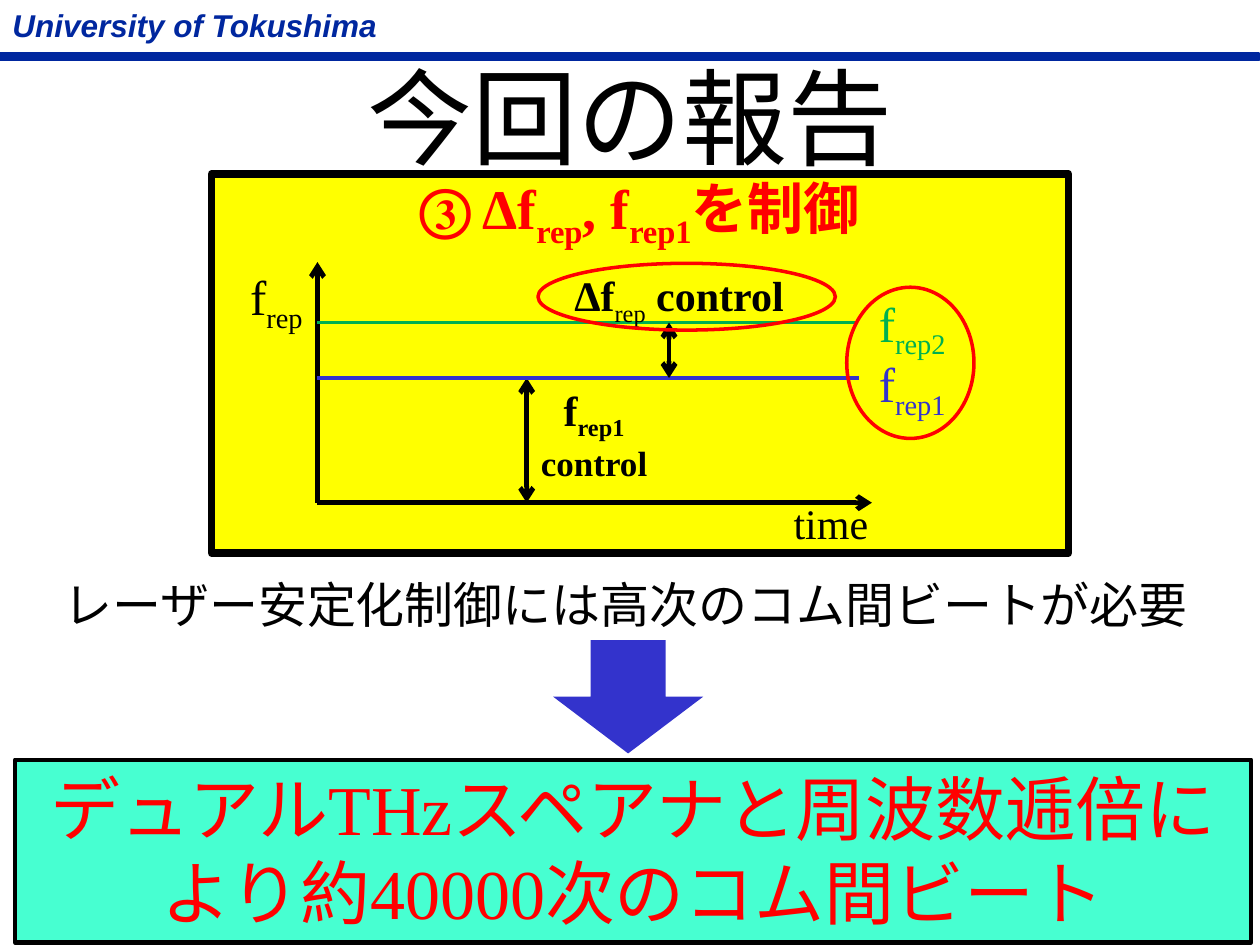
from dataclasses import dataclass
from typing import NamedTuple, Optional

from lxml.etree import SubElement
from pptx import Presentation
from pptx.dml.color import RGBColor
from pptx.enum.shapes import MSO_CONNECTOR, MSO_SHAPE
from pptx.enum.text import MSO_ANCHOR, PP_ALIGN
from pptx.oxml.ns import qn
from pptx.util import Inches, Pt

COLORS = {
    "navy": "00279F", "black": "000000", "yellow": "FFFF00", "green": "00B050",
    "blue": "3333CC", "red": "FF0000", "mint": "47FFD1",
}
COLS, ROWS = 100, 75
SERIF, SANS = "Times New Roman", "Arial"
LEFT, CENTER, RIGHT = PP_ALIGN.LEFT, PP_ALIGN.CENTER, PP_ALIGN.RIGHT

prs = Presentation()
prs.slide_width, prs.slide_height = Inches(10), Inches(7.5)
CELL_W, CELL_H = prs.slide_width / COLS, prs.slide_height / ROWS


class Box(NamedTuple):
    """Left, top, width and height in grid columns and rows."""
    col: float
    row: float
    cols: float
    rows: float

    def emu(self) -> list[int]:
        return [round(v * c) for v, c in zip(self, (CELL_W, CELL_H) * 2)]


class Run(NamedTuple):
    text: str
    size: float
    bold: bool = False
    sub: bool = False


@dataclass
class Label:
    box: Box
    paragraphs: list[list[Run]]
    color: str = "black"
    align: PP_ALIGN = CENTER
    font: str = SERIF
    italic: bool = False
    wrap: bool = True
    anchor: MSO_ANCHOR = MSO_ANCHOR.TOP


@dataclass
class Figure:
    kind: MSO_SHAPE
    box: Box
    fill: Optional[str] = None
    line: Optional[str] = None
    width: float = 1


@dataclass
class Stroke:
    start: tuple[float, float]
    end: tuple[float, float]
    color: str = "black"
    width: float = 2.75
    head: bool = False
    tail: bool = False


def rgb(name: str) -> RGBColor:
    return RGBColor.from_string(COLORS[name])


def write(sp, label: Label) -> None:
    tf = sp.text_frame
    tf.word_wrap = label.wrap
    tf.vertical_anchor = label.anchor
    for i, runs in enumerate(label.paragraphs):
        p = tf.add_paragraph() if i else tf.paragraphs[0]
        p.alignment = label.align
        for run in runs:
            r = p.add_run()
            r.text = run.text
            r.font.name, r.font.size = label.font, Pt(run.size)
            r.font.bold, r.font.italic = run.bold, label.italic
            r.font.color.rgb = rgb(label.color)
            if run.sub:
                r.font._element.set("baseline", "-25000")


def add_label(shapes, label: Label) -> None:
    write(shapes.add_textbox(*label.box.emu()), label)


def add_figure(shapes, fig: Figure):
    sp = shapes.add_shape(fig.kind, *fig.box.emu())
    sp.shadow.inherit = False
    if fig.fill:
        sp.fill.solid()
        sp.fill.fore_color.rgb = rgb(fig.fill)
    else:
        sp.fill.background()
    if fig.line:
        sp.line.color.rgb = rgb(fig.line)
        sp.line.width = Pt(fig.width)
    else:
        sp.line.fill.background()
    return sp


def add_stroke(shapes, stroke: Stroke) -> None:
    ends = Box(*stroke.start, *stroke.end).emu()
    line = shapes.add_connector(MSO_CONNECTOR.STRAIGHT, *ends)
    line.line.color.rgb = rgb(stroke.color)
    line.line.width = Pt(stroke.width)
    ln = line.line._get_or_add_ln()
    for tag, wanted in (("a:headEnd", stroke.head), ("a:tailEnd", stroke.tail)):
        if wanted:
            SubElement(ln, qn(tag), type="arrow")
    SubElement(line._element.spPr, qn("a:effectLst"))


def symbol(sub: str, size: float, bold: bool = False) -> list[Run]:
    return [Run("f", size, bold), Run(sub, size, bold, True)]


s = prs.slides.add_slide(prs.slide_layouts[6])

# Header band and title
add_figure(s.shapes, Figure(MSO_SHAPE.RECTANGLE, Box(0, 4.2, 99.9, 0.6), "navy", "navy"))
add_label(s.shapes, Label(Box(0, 0, 31.2, 4), [[Run("University of Tokushima", 18, True)]],
                          "navy", LEFT, SANS, italic=True, wrap=False))
add_label(s.shapes, Label(Box(7.5, 2.9, 85, 12.5), [[Run("今回の報告", 60)]],
                          font=SANS, anchor=MSO_ANCHOR.MIDDLE))

# Frequency diagram: panel, axes, levels and control arrows
X0, Y0 = 25.2, 39.9
REP1, REP2 = 30, 25.6
diagram = s.shapes.add_group_shape().shapes
add_figure(diagram, Figure(MSO_SHAPE.RECTANGLE, Box(16.8, 13.8, 68, 30.1),
                           "yellow", "black", 4.25))
for stroke in (
    Stroke((X0, Y0), (69.2, Y0), tail=True),
    Stroke((X0, Y0), (X0, 20.8), tail=True),
    Stroke((41.8, REP1), (41.8, Y0), head=True, tail=True),
    Stroke((X0, REP2), (68, REP2), "green", 2),
    Stroke((X0, REP1), (68.2, REP1), "blue", 2),
    Stroke((53.1, REP2), (53.1, REP1), head=True, tail=True),
):
    add_stroke(diagram, stroke)

# Diagram labels
for label in (
    Label(Box(60.1, 39, 11.7, 5), [[Run("time", 24)]]),
    Label(Box(41.6, 30, 11.1, 8.4),
          [symbol("rep1", 24, True), [Run("control", 20, True)]], wrap=False),
    Label(Box(13.8, 20.7, 11.2, 5.7), [symbol("rep", 28)], align=RIGHT),
    Label(Box(44.6, 20.9, 20.2, 5),
          [[Run("Δf", 24, True), Run("rep", 24, sub=True), Run(" control", 24, True)]],
          align=LEFT, wrap=False),
    Label(Box(67.3, 22.8, 10.2, 5.7), [symbol("rep2", 28)], "green"),
    Label(Box(66.8, 27.6, 11.2, 5.7), [symbol("rep1", 28)], "blue"),
    Label(Box(19.4, 13.3, 62.7, 6.4),
          [[Run("③ Δf", 32, True), Run("rep", 32, True, True), Run(", f", 32, True),
            Run("rep1", 32, True, True), Run("を制御", 32, True)]], "red"),
):
    add_label(diagram, label)

# Red rings around the controlled values
for ring in (Box(67.2, 22.8, 10.1, 12), Box(42.7, 20.9, 23.6, 5.3)):
    add_figure(diagram, Figure(MSO_SHAPE.OVAL, ring, line="red", width=2))

# Requirement, conclusion and the arrow between them
add_label(s.shapes, Label(Box(-1.2, 45.1, 101.7, 5.7),
                          [[Run("レーザー安定化制御には高次のコム間ビートが必要", 28)]]))
result = Box(1.2, 60.3, 98.1, 14.5)
sp = add_figure(s.shapes, Figure(MSO_SHAPE.RECTANGLE, result, "mint", "black", 2.5))
write(sp, Label(result, [[Run("デュアルTHzスペアナと周波数逓倍により約40000次のコム間ビート", 40)]], "red"))
add_figure(s.shapes, Figure(MSO_SHAPE.DOWN_ARROW, Box(43.9, 50.8, 11.9, 9), "blue"))

prs.save("out.pptx")
